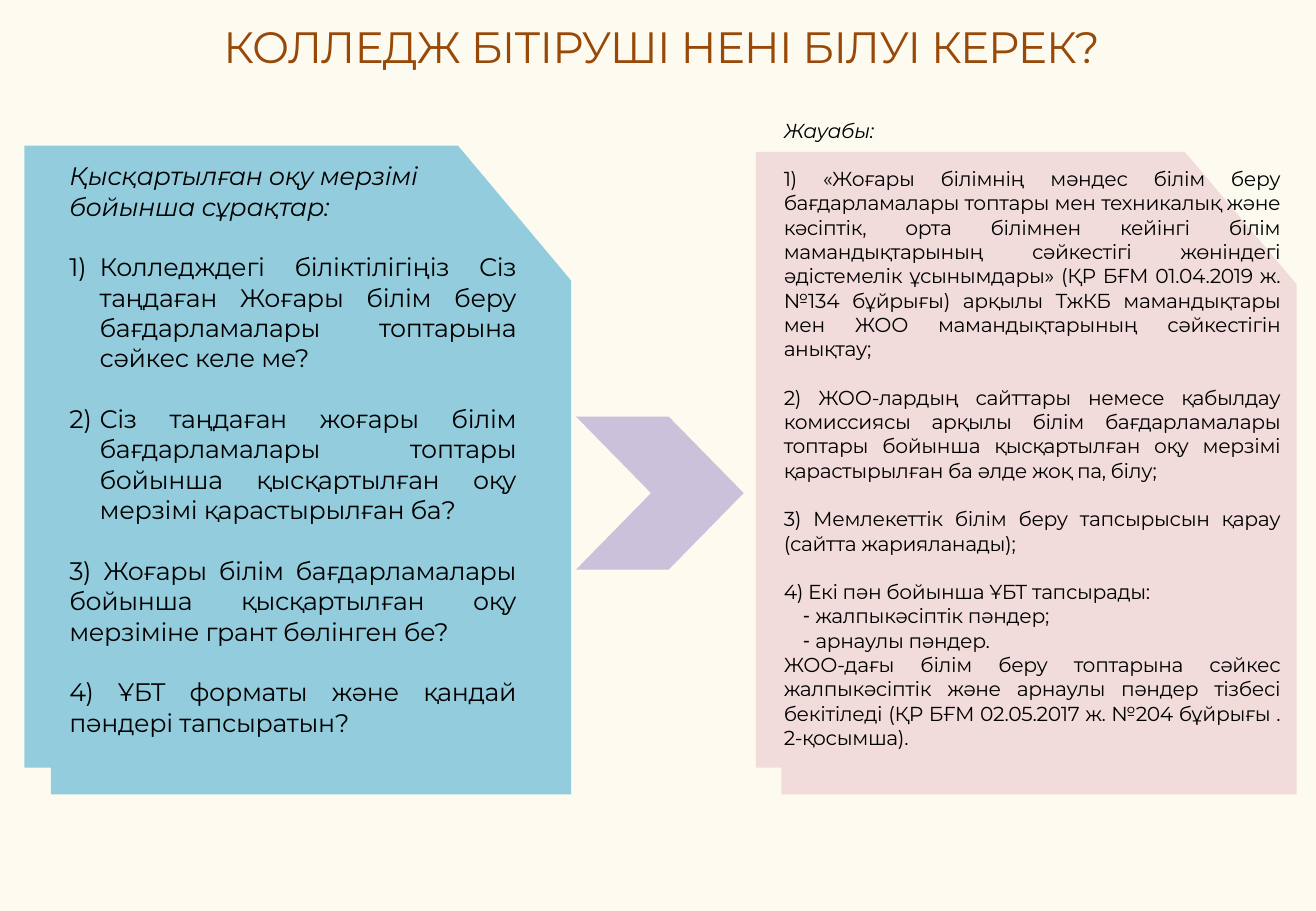
"""Build the slide with questions and answers for college graduates."""
from dataclasses import dataclass

from lxml import etree
from pptx import Presentation
from pptx import util as u
from pptx.dml import color
from pptx.enum import shapes, text
from pptx.oxml import ns

PX = 9144
FONT = "Montserrat"
LINE_HEIGHT = 1.2


@dataclass(frozen=True)
class Item:
    wording: str
    bullet: str = ""
    number: int = 0
    left: int = 0
    hang: int = 0
    gap: bool = True
    heading: bool = False


@dataclass(frozen=True)
class Panel:
    fill: str
    outline: list[tuple[int, int]]
    box: tuple[int, int, int, int]
    size: int
    items: list[Item]


PANELS = [
    Panel(
        "93CDDD",
        [(20, 120), (377, 120), (470, 231), (470, 654), (42, 654), (42, 632), (20, 632)],
        (47, 127, 388, 515),
        15,
        [
            Item("Қысқартылған оқу мерзімі бойынша сұрақтар:", heading=True),
            Item("Колледждегі біліктілігіңіз Сіз таңдаған Жоғары білім беру бағдарламалары "
                 "топтарына сәйкес келе ме?", number=1, left=25, hang=25),
            Item("Сіз таңдаған жоғары білім бағдарламалары топтары бойынша қысқартылған оқу "
                 "мерзімі қарастырылған ба?", number=2, left=25, hang=25),
            Item("3) Жоғары білім бағдарламалары бойынша қысқартылған оқу мерзіміне грант "
                 "бөлінген бе?"),
            Item("4) ҰБТ форматы және қандай пәндері тапсыратын?"),
        ],
    ),
    Panel(
        "F2DCDB",
        [(622, 125), (975, 125), (1067, 234), (1067, 654), (643, 654), (643, 632), (622, 632)],
        (635, 92, 429, 555),
        12,
        [
            Item("Жауабы:", heading=True),
            Item("1) «Жоғары білімнің мәндес білім беру бағдарламалары топтары мен техникалық "
                 "және кәсіптік, орта білімнен кейінгі білім мамандықтарының сәйкестігі "
                 "жөніндегі әдістемелік ұсынымдары» (ҚР БҒМ 01.04.2019 ж. №134 бұйрығы) арқылы "
                 "ТжКБ мамандықтары мен ЖОО мамандықтарының сәйкестігін анықтау;"),
            Item("2) ЖОО-лардың сайттары немесе қабылдау комиссиясы арқылы білім бағдарламалары "
                 "топтары бойынша қысқартылған оқу мерзімі қарастырылған ба әлде жоқ па, білу;"),
            Item("3) Мемлекеттік білім беру тапсырысын қарау (сайтта жарияланады);"),
            Item("4) Екі пән бойынша ҰБТ тапсырады:"),
            Item("жалпыкәсіптік пәндер;", bullet="-", left=26, hang=10, gap=False),
            Item("арнаулы пәндер.", bullet="-", left=26, hang=10, gap=False),
            Item("ЖОО-дағы білім беру топтарына сәйкес жалпыкәсіптік және арнаулы пәндер тізбесі "
                 "бекітіледі (ҚР БҒМ 02.05.2017 ж. №204 бұйрығы . 2-қосымша).", gap=False),
        ],
    ),
]


def rgb(value: str) -> color.RGBColor:
    """Turn a hex string into a colour."""
    return color.RGBColor.from_string(value)


def place(box, left: int, top: int, width: int, height: int) -> None:
    """Move and size a box given in px."""
    box.left, box.top, box.width, box.height = (n * PX for n in (left, top, width, height))
    frame = box.text_frame
    frame.word_wrap = True
    frame.auto_size = text.MSO_AUTO_SIZE.NONE
    frame.vertical_anchor = text.MSO_ANCHOR.TOP


def paint(page, shape, fill: str) -> None:
    """Fill a shape plainly and put it behind the text."""
    shape.shadow.inherit = False
    shape.fill.solid()
    shape.fill.fore_color.rgb = rgb(fill)
    shape.line.fill.background()
    page.shapes.title.element.addprevious(shape.element)


def style(para, size: int, fill: str, tracking: int, italic: bool = False) -> None:
    """Format every run of a paragraph."""
    for span in para.runs:
        span.font.name = FONT
        span.font.size = u.Pt(size)
        span.font.italic = italic
        span.font.color.rgb = rgb(fill)
        span.font._element.set("spc", str(tracking))


def mark(para, item: Item) -> None:
    """Set the indent and the bullet of a paragraph."""
    props = para._p.get_or_add_pPr()
    props.set("marL", str(item.left * PX))
    props.set("indent", str(-item.hang * PX))
    if item.number:
        bullet = etree.SubElement(props, ns.qn("a:buAutoNum"), type="arabicParenR")
        bullet.set("startAt", str(item.number))
    elif item.bullet:
        etree.SubElement(props, ns.qn("a:buChar"), char=item.bullet)
    else:
        etree.SubElement(props, ns.qn("a:buNone"))


def write_list(box, panel: Panel) -> None:
    """Write the items of a panel into its placeholder."""
    place(box, *panel.box)
    box.text_frame.text = "\n".join(item.wording for item in panel.items)
    for para, item in zip(box.text_frame.paragraphs, panel.items):
        mark(para, item)
        spaced = item.gap and not item.heading
        para.space_before = u.Pt(panel.size * LINE_HEIGHT if spaced else 0)
        para.alignment = text.PP_ALIGN.LEFT if item.heading else text.PP_ALIGN.JUSTIFY
        style(para, panel.size, "000000", -20, item.heading)


def draw_panel(page, panel: Panel) -> None:
    """Draw the stacked sheets with a cut corner."""
    start, *rest = [(x * PX, y * PX) for x, y in panel.outline]
    builder = page.shapes.build_freeform(*start)
    builder.add_line_segments(rest, close=True)
    paint(page, builder.convert_to_shape(), panel.fill)


def main() -> None:
    """Build and save the deck."""
    deck = Presentation()
    deck.slide_width, deck.slide_height = 1083 * PX, 750 * PX
    page = deck.slides.add_slide(deck.slide_layouts[3])
    page.background.fill.solid()
    page.background.fill.fore_color.rgb = rgb("FDFAF0")

    title, *bodies = page.placeholders
    place(title, 11, 16, 1067, 44)
    frame = title.text_frame
    frame.margin_left = frame.margin_right = frame.margin_top = frame.margin_bottom = 0
    frame.text = "КОЛЛЕДЖ БІТІРУШІ НЕНІ БІЛУІ КЕРЕК?"
    frame.paragraphs[0].alignment = text.PP_ALIGN.CENTER
    style(frame.paragraphs[0], 26, "984807", -50)

    for panel, body in zip(PANELS, bodies):
        draw_panel(page, panel)
        write_list(body, panel)

    arrow = page.shapes.add_shape(
        shapes.MSO_SHAPE.CHEVRON, 474 * PX, 343 * PX, 138 * PX, 126 * PX)
    arrow.adjustments[0] = 0.49
    paint(page, arrow, "CCC1DA")
    deck.save("out.pptx")


if __name__ == "__main__":
    main()
